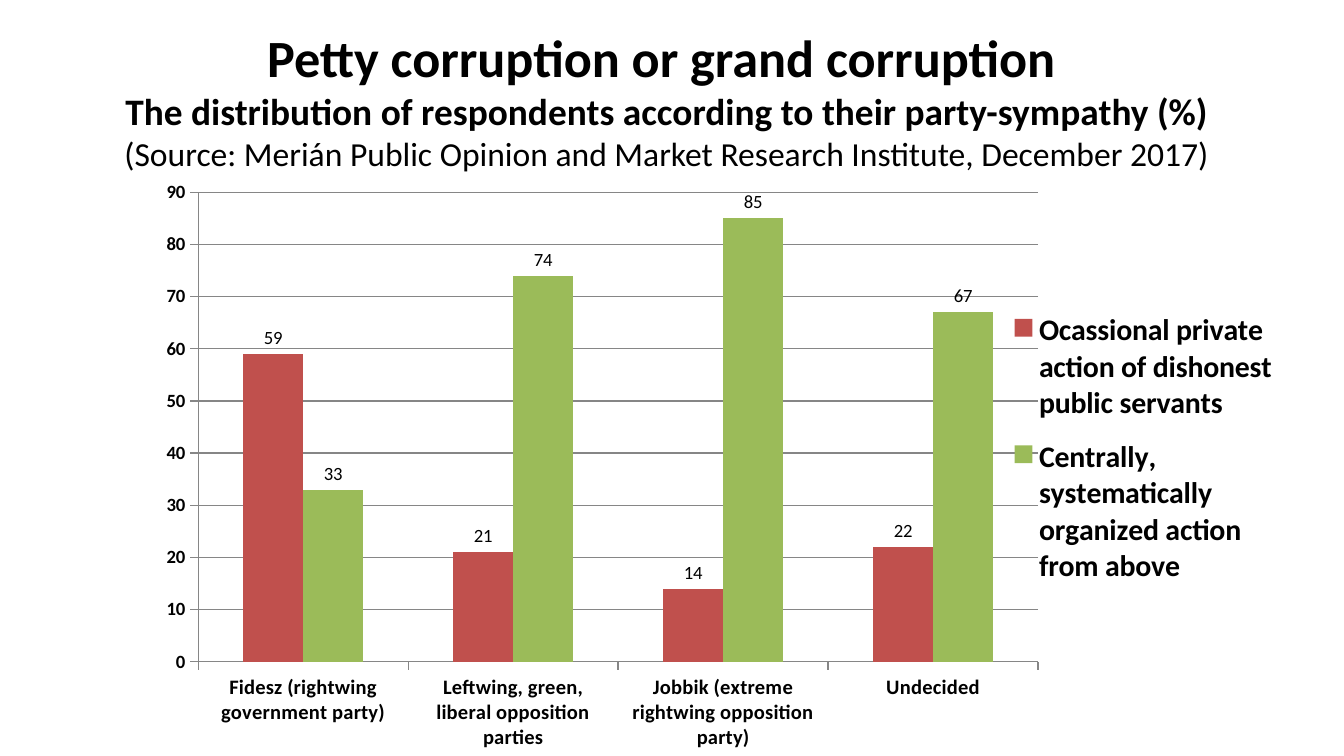
from dataclasses import dataclass

import pptx
import pptx.chart.data
import pptx.dml.color
import pptx.enum.chart
import pptx.enum.text
import pptx.oxml
import pptx.oxml.ns
import pptx.util

EMU_PER_PX = 5715  # 160 px to the inch


@dataclass(frozen=True)
class Theme:
    font: str = "Calibri"
    text: str = "000000"
    axis: str = "868686"
    private: str = "C0504D"
    central: str = "9BBB59"
    title_size: int = 28
    subtitle_size: int = 20
    source_size: int = 18
    legend_size: int = 16
    category_size: int = 11
    value_size: int = 10


@dataclass(frozen=True)
class Box:
    left: int
    top: int
    width: int
    height: int

    def emu(self) -> tuple[int, ...]:
        return tuple(px(n) for n in (self.left, self.top, self.width, self.height))


@dataclass(frozen=True)
class Heading:
    text: str
    size: int
    bold: bool


@dataclass(frozen=True)
class Answer:
    name: str
    shares: tuple[int, ...]
    color: str


THEME = Theme()
SLIDE = Box(0, 0, 1600, 900)
HEADING_BOX = Box(69, 22, 1450, 194)
CHART_BOX = Box(82, 198, 1450, 702)
# Measured from the corner of the chart
PLOT_BOX = Box(154, 31, 1000, 559)
LEGEND_BOX = Box(1112, 154, 334, 365)

HEADINGS = (
    Heading("Petty corruption or grand corruption ", THEME.title_size, True),
    Heading("The distribution of respondents according to their party-sympathy (%)",
            THEME.subtitle_size, True),
    Heading("(Source: Merián Public Opinion and Market Research Institute, December 2017)",
            THEME.source_size, False),
)
PARTIES = (
    "Fidesz (rightwing government party)",
    "Leftwing, green, liberal opposition parties",
    "Jobbik (extreme rightwing opposition party)",
    "Undecided",
)
ANSWERS = (
    Answer("Ocassional private action of dishonest public servants",
           (59, 21, 14, 22), THEME.private),
    Answer("Centrally, systematically organized action from above",
           (33, 74, 85, 67), THEME.central),
)


def px(length: int) -> int:
    return length * EMU_PER_PX


def rgb(color: str) -> pptx.dml.color.RGBColor:
    return pptx.dml.color.RGBColor.from_string(color)


def style_font(font, size: int, bold: bool) -> None:
    font.name = THEME.font
    font.size = pptx.util.Pt(size)
    font.bold = bold
    font.color.rgb = rgb(THEME.text)


def style_line(line) -> None:
    line.color.rgb = rgb(THEME.axis)
    line.width = pptx.util.Pt(0.75)


def place(part, box: Box, chart_box: Box, inner: bool = False) -> None:
    """Give a chart part a manual layout in fractions of the chart."""
    fields = {"layoutTarget": "inner"} if inner else {}
    fields |= {
        "xMode": "edge",
        "yMode": "edge",
        "x": box.left / chart_box.width,
        "y": box.top / chart_box.height,
        "w": box.width / chart_box.width,
        "h": box.height / chart_box.height,
    }
    children = "".join(f'<c:{tag} val="{value}"/>' for tag, value in fields.items())
    layout = pptx.oxml.parse_xml(
        f'<c:layout {pptx.oxml.ns.nsdecls("c")}>'
        f"<c:manualLayout>{children}</c:manualLayout></c:layout>")
    for old in part.findall(pptx.oxml.ns.qn("c:layout")):
        part.remove(old)
    # Layout comes first in a plot area and second in a legend
    part.insert(0 if inner else 1, layout)


def draw_headings(slide, box: Box, headings: tuple[Heading, ...]) -> None:
    frame = slide.shapes.add_textbox(*box.emu()).text_frame
    frame.word_wrap = True
    frame.auto_size = pptx.enum.text.MSO_AUTO_SIZE.SHAPE_TO_FIT_TEXT
    frame.text = "\n".join(heading.text for heading in headings)
    for paragraph, heading in zip(frame.paragraphs, headings):
        paragraph.alignment = pptx.enum.text.PP_ALIGN.CENTER
        style_font(paragraph.runs[0].font, heading.size, heading.bold)


def draw_chart(slide, box: Box, answers: tuple[Answer, ...]) -> None:
    survey = pptx.chart.data.CategoryChartData()
    survey.categories = PARTIES
    for answer in answers:
        survey.add_series(answer.name, answer.shares)
    chart = slide.shapes.add_chart(
        pptx.enum.chart.XL_CHART_TYPE.COLUMN_CLUSTERED, *box.emu(), survey).chart
    chart.has_title = False
    style_font(chart.font, THEME.value_size, False)

    # Columns and their labels
    columns = chart.plots[0]
    columns.gap_width = 150
    columns.overlap = 0
    columns.vary_by_categories = False
    for series, answer in zip(columns.series, answers):
        series.format.fill.solid()
        series.format.fill.fore_color.rgb = rgb(answer.color)
        series.data_labels.show_value = True
        series.data_labels.position = pptx.enum.chart.XL_LABEL_POSITION.OUTSIDE_END
        style_font(series.data_labels.font, THEME.value_size, False)

    # Axes
    shares = chart.value_axis
    shares.minimum_scale, shares.maximum_scale, shares.major_unit = 0, 90, 10
    shares.has_major_gridlines = True
    style_line(shares.major_gridlines.format.line)
    for axis, size in ((chart.category_axis, THEME.category_size),
                       (shares, THEME.value_size)):
        axis.major_tick_mark = pptx.enum.chart.XL_TICK_MARK.OUTSIDE
        style_line(axis.format.line)
        style_font(axis.tick_labels.font, size, True)

    # Legend and plot positions
    chart.has_legend = True
    chart.legend.position = pptx.enum.chart.XL_LEGEND_POSITION.RIGHT
    chart.legend.include_in_layout = False
    style_font(chart.legend.font, THEME.legend_size, True)
    parts = chart.element.find(pptx.oxml.ns.qn("c:chart"))
    place(parts.find(pptx.oxml.ns.qn("c:plotArea")), PLOT_BOX, box, inner=True)
    place(parts.find(pptx.oxml.ns.qn("c:legend")), LEGEND_BOX, box)


def main() -> None:
    deck = pptx.Presentation()
    deck.slide_width, deck.slide_height = px(SLIDE.width), px(SLIDE.height)
    slide = deck.slides.add_slide(deck.slide_layouts[6])
    draw_chart(slide, CHART_BOX, ANSWERS)
    draw_headings(slide, HEADING_BOX, HEADINGS)
    deck.save("out.pptx")


if __name__ == "__main__":
    main()
